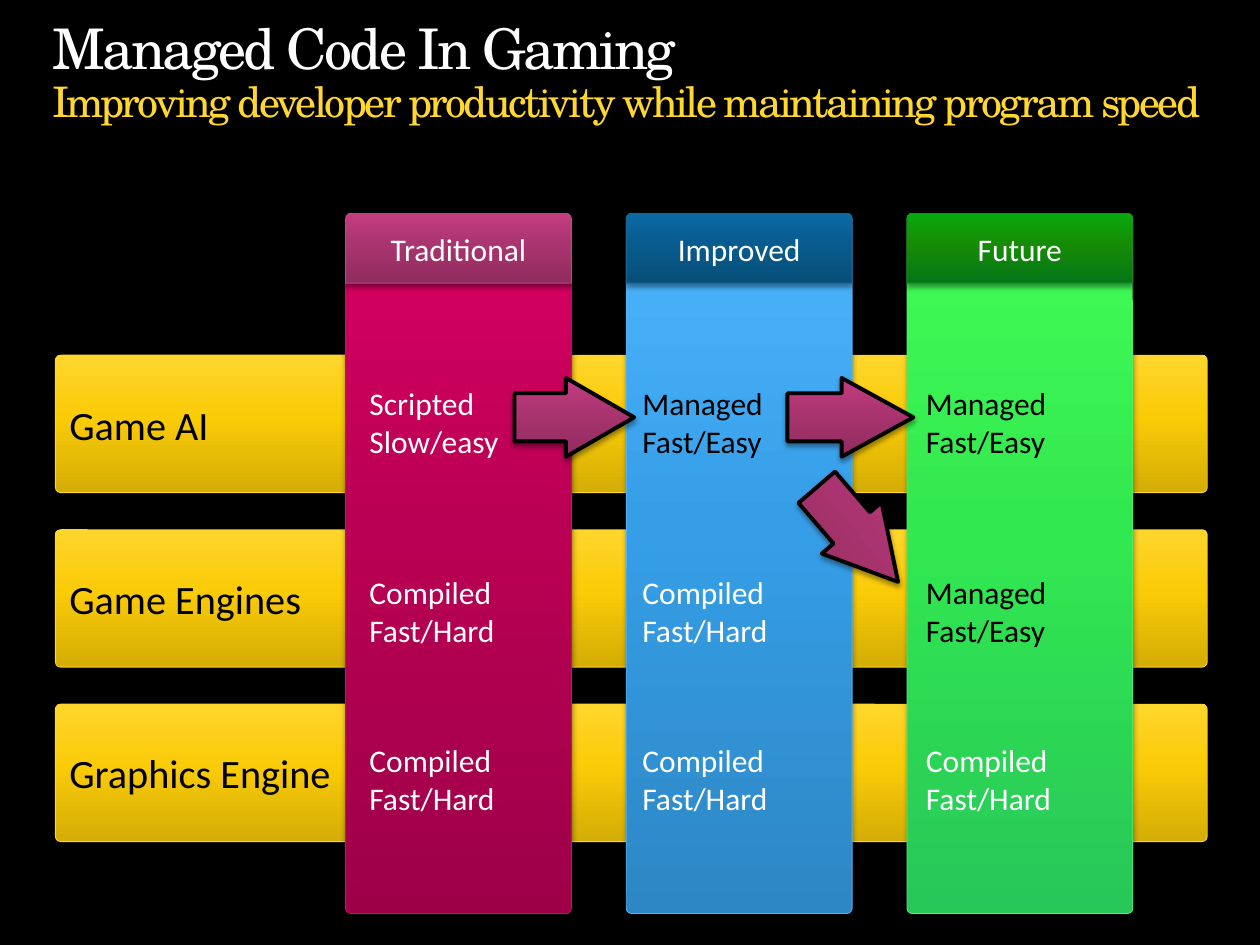
from pptx import Presentation
from pptx.dml.color import RGBColor as RGB
from pptx.enum.shapes import MSO_SHAPE as Kind
from pptx.enum.text import MSO_ANCHOR as Anchor, MSO_AUTO_SIZE as Fit, PP_ALIGN as Align
from pptx.oxml import parse_xml
from pptx.oxml.ns import nsdecls
from pptx.util import Pt

BLACK = RGB(0x00, 0x00, 0x00)
WHITE = RGB(0xFF, 0xFF, 0xFF)
YELLOW = RGB(0xFF, 0xD7, 0x2F)


def shades(*codes):
    return [RGB.from_string(code) for code in codes]


# Bottom, middle and top of the gradient, then the outline
GOLD = shades("D4AD06", "FACB07", "FFD62C", "FED529")
PINK = shades("9E0048", "BA0054", "D80062", "C41162")
BLUE = shades("2D87C4", "369EE7", "4CB6FF", "55B2F1")
GREEN = shades("27C759", "32E850", "42FC54", "53F371")
PLUM = shades("902C5E", "A9346F", "C53D81", "B24C7F")
NAVY = shades("074E78", "085B8D", "0A6AA5", "1C6491")
FOREST = shades("04761A", "168C06", "08A80C", "199319")

TITLE = [("Managed Code In Gaming", 32, WHITE),
         ("Improving developer productivity while maintaining program speed", 24, YELLOW)]
ROWS = ["Game AI", "Game Engines", "Graphics Engine"]

SCRIPT = ("Scripted", "Slow/easy", WHITE)
HARD = ("Compiled", "Fast/Hard", WHITE)
EASY = ("Managed", "Fast/Easy", BLACK)
# Heading, body shades, heading shades, left of the notes, one note per row
COLS = [("Traditional", PINK, PLUM, 204, [SCRIPT, HARD, HARD]),
        ("Improved", BLUE, NAVY, 360, [EASY, HARD, HARD]),
        ("Future", GREEN, FOREST, 522, [EASY, EASY, HARD])]
NOTE_TOPS = [216, 324, 420]
# Left, top, width, rotation
ARROWS = [(294, 216, 68.4, 0), (454.3, 283, 71.3, 49.3), (450, 216, 72, 0)]

ROW_X, ROW_Y, ROW_W, ROW_H, ROW_STEP = 31.7, 203, 658.2, 78.5, 99.7
COL_X, COL_Y, COL_W, COL_H, COL_STEP = 197.5, 122, 129, 400, 160.4
HEAD_H, ARROW_H, RADIUS = 39.8, 45, 3

deck = Presentation()
deck.slide_width, deck.slide_height = Pt(720), Pt(540)
slide = deck.slides.add_slide(deck.slide_layouts[6])
slide.background.fill.solid()
slide.background.fill.fore_color.rgb = BLACK


def write(para, text, size, color, font="Calibri"):
    run = para.add_run()
    run.text = text
    run.font.name, run.font.size, run.font.color.rgb = font, Pt(size), color
    return run


def block(kind, box, tones, edge=None, weight=0.5):
    """Add a shape with a vertical three-stop gradient and a soft shadow."""
    shape = slide.shapes.add_shape(kind, *map(Pt, box))
    stops = "".join(f'<a:gs pos="{pos}"><a:srgbClr val="{tone}"/></a:gs>'
                    for pos, tone in zip((0, 55000, 100000), tones))
    props = shape.fill._xPr
    props.insert(2, parse_xml(
        f'<a:gradFill {nsdecls("a")} rotWithShape="1"><a:gsLst>{stops}</a:gsLst>'
        '<a:lin ang="16200000" scaled="0"/></a:gradFill>'))
    shape.line.color.rgb = edge or tones[3]
    shape.line.width = Pt(weight)
    props.append(parse_xml(
        f'<a:effectLst {nsdecls("a")}><a:outerShdw blurRad="{Pt(3.1)}" dist="{Pt(2)}" '
        'dir="5400000" rotWithShape="0"><a:srgbClr val="000000"><a:alpha val="38000"/>'
        '</a:srgbClr></a:outerShdw></a:effectLst>'))
    return shape


def label(shape, text, size, color, align):
    frame = shape.text_frame
    frame.word_wrap = True
    frame.vertical_anchor = Anchor.MIDDLE
    frame.paragraphs[0].alignment = align
    write(frame.paragraphs[0], text, size, color)


def text_box(*box):
    frame = slide.shapes.add_textbox(*map(Pt, box)).text_frame
    frame.word_wrap = True
    frame.auto_size = Fit.SHAPE_TO_FIT_TEXT
    return frame


for i, name in enumerate(ROWS):
    band = block(Kind.ROUNDED_RECTANGLE, (ROW_X, ROW_Y + i * ROW_STEP, ROW_W, ROW_H), GOLD)
    band.adjustments[0] = RADIUS / ROW_H
    label(band, name, 23, BLACK, Align.LEFT)

for i, (name, body, top, note_x, notes) in enumerate(COLS):
    x = COL_X + i * COL_STEP
    pillar = block(Kind.ROUNDED_RECTANGLE, (x, COL_Y, COL_W, COL_H), body)
    pillar.adjustments[0] = RADIUS / COL_W
    head = block(Kind.ROUND_2_SAME_RECTANGLE, (x, COL_Y, COL_W, HEAD_H), top)
    head.adjustments[0] = RADIUS / HEAD_H
    label(head, name, 18, WHITE, Align.CENTER)
    for y, (first, second, color) in zip(NOTE_TOPS, notes):
        frame = text_box(note_x, y, 120, 51)
        write(frame.paragraphs[0], first, 18, color)
        write(frame.add_paragraph(), second, 18, color)

frame = text_box(30, 12, 659, 61)
frame.margin_left = frame.margin_right = frame.margin_top = frame.margin_bottom = 0
para = frame.paragraphs[0]
para.line_spacing = 0.9
for i, (text, size, color) in enumerate(TITLE):
    if i:
        para.add_line_break()
    run = write(para, text, size, color, "TeX Gyre Schola")
    run.font._element.set("spc", "-150")

for x, y, width, turn in ARROWS:
    arrow = block(Kind.RIGHT_ARROW, (x, y, width, ARROW_H), PLUM, BLACK, 2.25)
    arrow.adjustments[0] = 0.61
    arrow.adjustments[1] = 0.57 * width / ARROW_H
    arrow.rotation = turn

deck.save("out.pptx")
